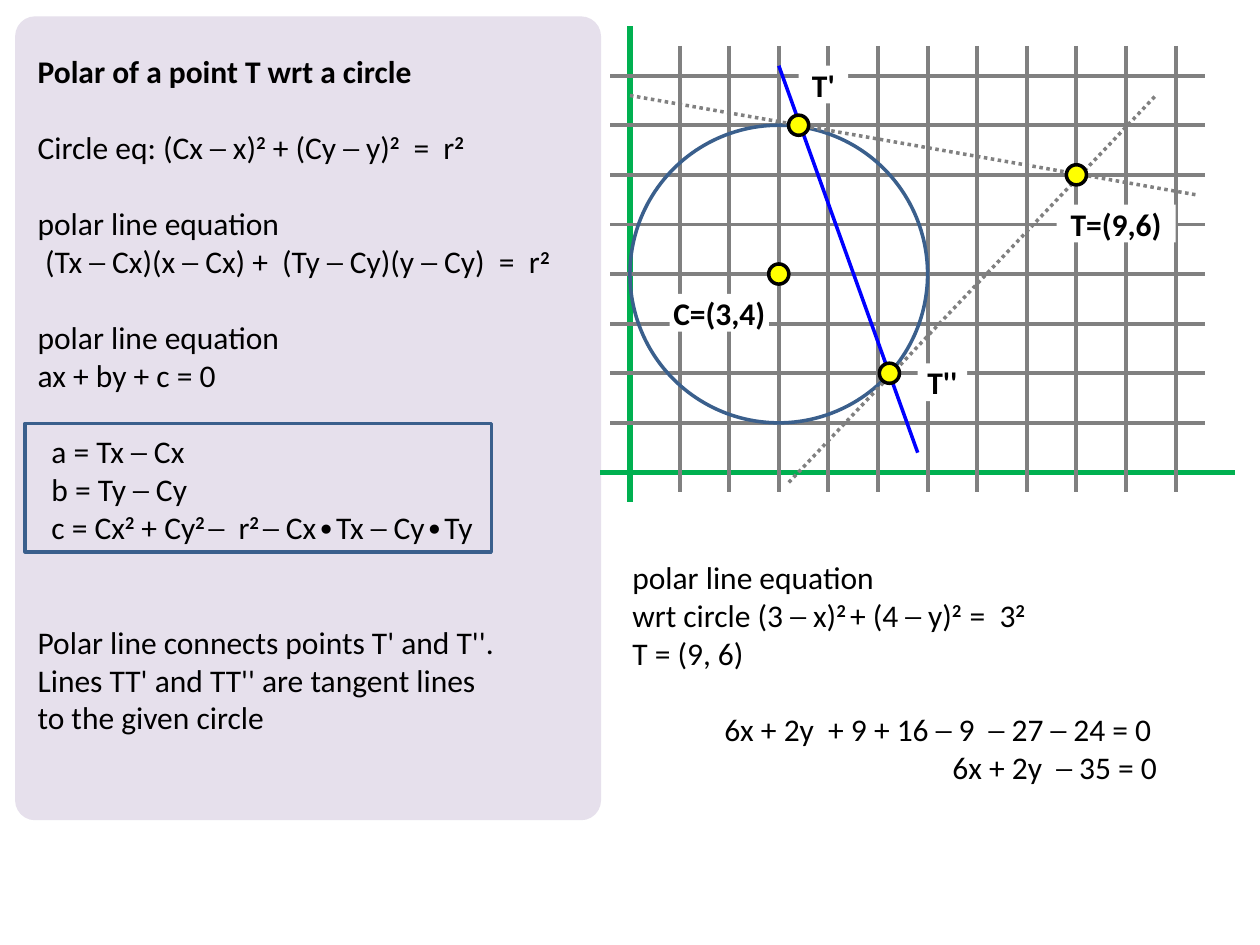
from lxml import etree
from pptx import Presentation
from pptx.dml.color import RGBColor
from pptx.enum.dml import MSO_LINE
from pptx.enum.shapes import MSO_CONNECTOR, MSO_SHAPE
from pptx.enum.text import MSO_ANCHOR, PP_ALIGN
from pptx.oxml.ns import qn
from pptx.util import Inches, Pt

STRAIGHT = MSO_CONNECTOR.STRAIGHT
RECT, ROUND, OVAL = MSO_SHAPE.RECTANGLE, MSO_SHAPE.ROUNDED_RECTANGLE, MSO_SHAPE.OVAL
DOTTED = MSO_LINE.ROUND_DOT  # sysDot
MIDDLE, CENTER = MSO_ANCHOR.MIDDLE, PP_ALIGN.CENTER

COLORS = {
    "panel": "E6E0EC", "grid": "808080", "axis": "00B050", "outline": "3A5F8C",
    "polar": "0000FF", "point": "FFFF00", "black": "000000", "white": "FFFFFF",
}
COLORS = {name: RGBColor.from_string(value) for name, value in COLORS.items()}
UNIT = 1 / 2.54  # one grid step in inches
X0, Y0 = 5, 3.75  # origin of the coordinate system
LINE_PT = 22  # height of one 18 pt text line

prs = Presentation()
prs.slide_width, prs.slide_height = Inches(10), Inches(7.5)
s = prs.slides.add_slide(prs.slide_layouts[6])


def add_shape(kind, x, y, w, h, fill=None, line=None):
    sp = s.shapes.add_shape(kind, Inches(x), Inches(y), Inches(w), Inches(h))
    sp.shadow.inherit = False
    if fill:
        sp.fill.solid()
        sp.fill.fore_color.rgb = COLORS[fill]
    else:
        sp.fill.background()
    if line:
        sp.line.color.rgb = COLORS[line]
        sp.line.width = Pt(2)
    else:
        sp.line.fill.background()
    return sp


def add_line(x1, y1, x2, y2, color, width):
    """Draw a line between two points in grid coordinates."""
    ln = s.shapes.add_connector(
        STRAIGHT, Inches(X0 + x1 * UNIT), Inches(Y0 - y1 * UNIT),
        Inches(X0 + x2 * UNIT), Inches(Y0 - y2 * UNIT))
    ln.line.color.rgb = COLORS[color]
    ln.line.width = Pt(width)
    etree.SubElement(ln._element.spPr, qn("a:effectLst"))
    return ln


# Panel behind the formulas
panel = add_shape(ROUND, 0.12, 0.13, 4.65, 6.38, fill="panel")
panel.adjustments[0] = 0.034

# Axes and grid
add_line(-0.6, 0, 12.2, 0, "axis", 3)
add_line(0, 9, 0, -0.6, "axis", 3)
for x in range(1, 12):
    add_line(x, 8.6, x, -0.4, "grid", 2.25)
for y in range(1, 9):
    add_line(-0.4, y, 11.6, y, "grid", 2.25)

# Labels: text, left, top and width in grid units
for text, x, y, w in [("C=(3,4)", 0.8, 3.6, 2), ("T=(9,6)", 8.6, 5.4, 2.4),
                      ("T'", 3.4, 8.2, 1), ("T''", 5.8, 2.2, 1)]:
    sp = add_shape(RECT, X0 + x * UNIT, Y0 - y * UNIT, w * UNIT, 0.3, fill="white")
    tf = sp.text_frame
    tf.margin_left = tf.margin_right = tf.margin_top = tf.margin_bottom = 0
    tf.vertical_anchor = MIDDLE
    tf.word_wrap = False
    p = tf.paragraphs[0]
    p.text = text
    p.alignment = CENTER
    p.font.name, p.font.size, p.font.bold = "Calibri", Pt(18), True
    p.font.color.rgb = COLORS["black"]

# Texts: (text with ^superscripts^, indent in inches, empty lines before)
theory = [
    ("Polar of a point T wrt a circle", 0, 0),
    ("Circle eq: (Cx ─ x)^2^ + (Cy ─ y)^2^  =  r^2^", 0, 1),
    ("polar line equation", 0, 1),
    ("(Tx ─ Cx)(x ─ Cx) +  (Ty ─ Cy)(y ─ Cy)  =  r^2^", 0.06, 0),
    ("polar line equation", 0, 1),
    ("ax + by + c = 0", 0, 0),
    ("a = Tx ─ Cx", 0.11, 1),
    ("b = Ty ─ Cy", 0.11, 0),
    ("c = Cx^2^ + Cy^2 ^─  r^2 ^─ Cx∙Tx ─ Cy∙Ty", 0.11, 0),
    ("Polar line connects points T' and T''.", 0, 2),
    ("Lines TT' and TT'' are tangent lines", 0, 0),
    ("to the given circle", 0, 0),
]
example = [
    ("polar line equation", 0, 0),
    ("wrt circle (3 ─ x)^2 ^+ (4 ─ y)^2  ^=  3^2^", 0, 0),
    ("T = (9, 6)", 0, 0),
    ("6x + 2y  + 9 + 16 ─ 9  ─ 27 ─ 24 = 0", 0.73, 1),
    ("6x + 2y  ─ 35 = 0", 2.54, 0),
]
for rows, x, y, w, h in [(theory, 0.2, 0.36, 4.49, 5.55),
                         (example, 4.92, 4.38, 4.65, 1.92)]:
    tf = s.shapes.add_textbox(Inches(x), Inches(y), Inches(w), Inches(h)).text_frame
    tf.word_wrap = True
    for i, (text, indent, gap) in enumerate(rows):
        p = tf.add_paragraph() if i else tf.paragraphs[0]
        p.font.name, p.font.size = "Calibri", Pt(18)
        p.font.color.rgb = COLORS["black"]
        p.font.bold = rows is theory and i == 0
        p.space_before = Pt(gap * LINE_PT)
        p._p.get_or_add_pPr().set("marL", str(Inches(indent)))
        for j, part in enumerate(text.split("^")):
            if part:
                r = p.add_run()
                r.text = part
                if j % 2:
                    r.font.bold = True
                    r._r.get_or_add_rPr().set("baseline", "30000")

# Frame around the coefficients
add_shape(RECT, 0.2, 3.36, 3.7, 1.02, line="outline")

# Circle with centre (3, 4) and radius 3
add_shape(OVAL, X0, Y0 - 7 * UNIT, 6 * UNIT, 6 * UNIT, line="outline")

# Tangents and polar line
for ends in [(0, 7.6, 11.4, 5.6), (3.2, -0.2, 10.6, 7.6)]:
    add_line(*ends, "grid", 2).line.dash_style = DOTTED
add_line(3, 8.2, 5.8, 0.4, "polar", 2)

# Points C, T, T' and T''
for x, y in [(3, 4), (9, 6), (3.4, 7), (5.23, 2)]:
    add_shape(OVAL, X0 + x * UNIT - 0.08, Y0 - y * UNIT - 0.08, 0.16, 0.16,
              fill="point", line="black")

prs.save("out.pptx")
